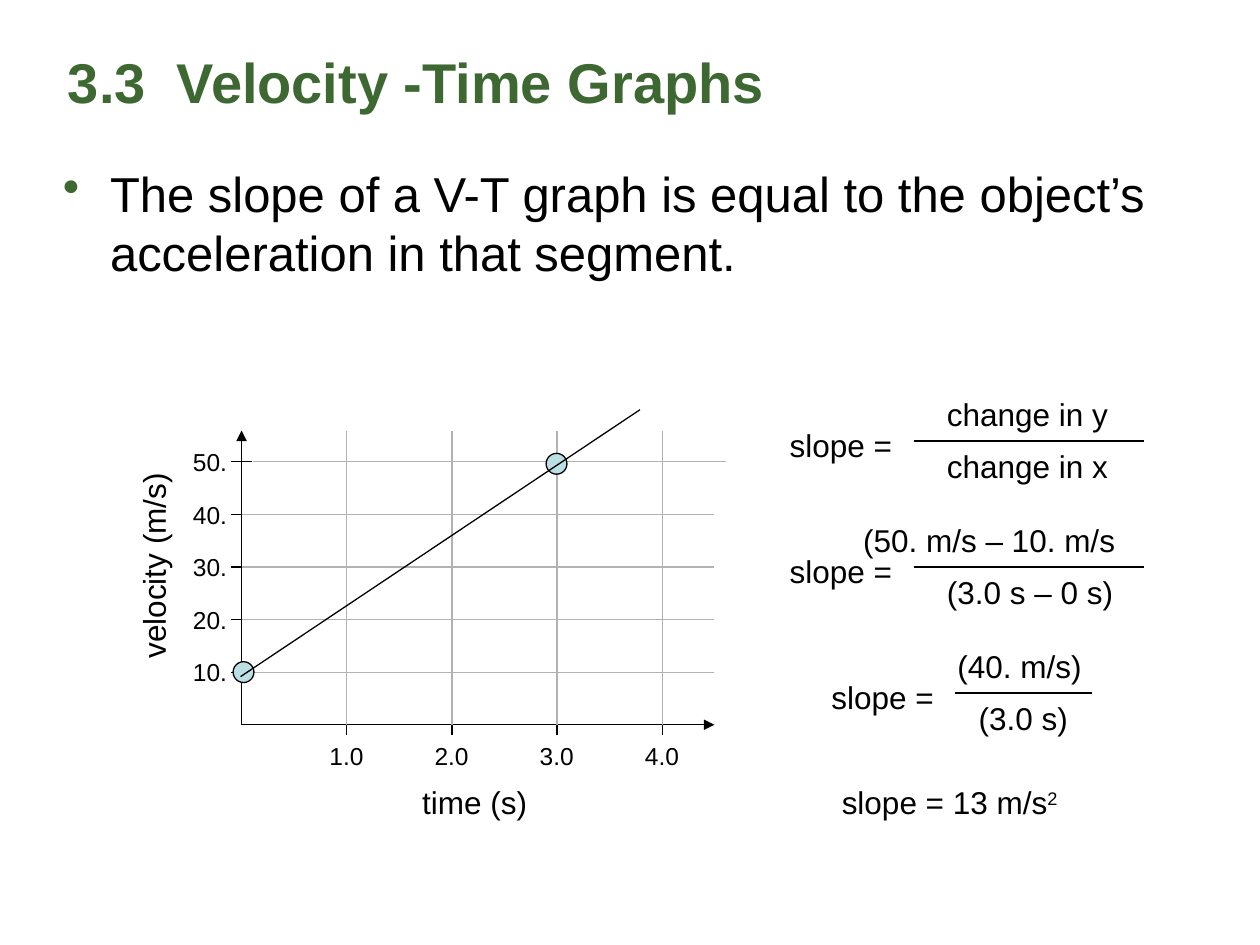
from dataclasses import dataclass

from lxml.etree import SubElement
from pptx import Presentation
from pptx.dml.color import RGBColor
from pptx.enum.shapes import MSO_CONNECTOR, MSO_SHAPE
from pptx.enum.text import MSO_ANCHOR, PP_ALIGN
from pptx.oxml.ns import qn
from pptx.util import Cm, Pt


@dataclass(frozen=True)
class Theme:
    font: str = "Arial"
    green: str = "3D6832"
    black: str = "000000"
    grey: str = "B2B2B2"
    blue: str = "BBE0E3"
    title: int = 32
    body: int = 28
    label: int = 18
    tick: int = 14
    line: float = 0.75


THEME = Theme()

# Graph frame in cm: origin, axis ends and the gap between ticks
LEFT, BASE = 4.87, 14.61
RIGHT, TOP = 14.4, 8.68
STEP_X, STEP_Y = 2.12, 1.06
TICK = 0.21


def rgb(code):
    return RGBColor.from_string(code)


def add_text(slide, text, x, y, width, height=1.01, size=THEME.label,
             color=THEME.black, bold=False, align=PP_ALIGN.LEFT):
    box = slide.shapes.add_textbox(Cm(x), Cm(y), Cm(width), Cm(height))
    box.text_frame.word_wrap = True
    para = box.text_frame.paragraphs[0]
    para.text = text
    para.alignment = align
    para.font.name = THEME.font
    para.font.size = Pt(size)
    para.font.bold = bold
    para.font.color.rgb = rgb(color)
    return box


def add_line(slide, x1, y1, x2, y2, color=THEME.black, arrow=False):
    line = slide.shapes.add_connector(
        MSO_CONNECTOR.STRAIGHT, Cm(x1), Cm(y1), Cm(x2), Cm(y2))
    line.line.color.rgb = rgb(color)
    line.line.width = Pt(THEME.line)
    props = line._element.spPr
    if arrow:
        SubElement(props.find(qn("a:ln")), qn("a:tailEnd"), type="triangle")
    SubElement(props, qn("a:effectLst"))


def add_dot(slide, x, y, size=0.42):
    dot = slide.shapes.add_shape(
        MSO_SHAPE.OVAL, Cm(x), Cm(y), Cm(size), Cm(size))
    dot.shadow.inherit = False
    dot.fill.solid()
    dot.fill.fore_color.rgb = rgb(THEME.blue)
    dot.line.color.rgb = rgb(THEME.black)
    dot.line.width = Pt(THEME.line)


def add_title(slide, text):
    box = add_text(slide, text, 0.1, 0.84, 25.4, 1.6, THEME.title,
                   THEME.green, bold=True)
    box.text_frame.margin_left = Cm(1.27)
    box.text_frame.vertical_anchor = MSO_ANCHOR.BOTTOM


def add_bullet(slide, text):
    box = add_text(slide, text, 1.02, 3.18, 22.86, 14.2, THEME.body)
    props = box.text_frame.paragraphs[0]._p.get_or_add_pPr()
    props.set("marL", str(Cm(0.95)))
    props.set("indent", str(Cm(-0.95)))
    # Bullet tags must come before the font defaults
    color = props.makeelement(qn("a:buClr"), {})
    SubElement(color, qn("a:srgbClr"), val=THEME.green)
    props.insert(0, color)
    props.insert(1, props.makeelement(qn("a:buChar"), {"char": "•"}))


def add_graph(slide):
    cols = [(LEFT + i * STEP_X, f"{i}.0") for i in range(1, 5)]
    rows = [(BASE - i * STEP_Y, f"{i}0.") for i in range(1, 6)]

    add_line(slide, LEFT, BASE, LEFT, TOP, arrow=True)
    add_line(slide, LEFT, BASE, RIGHT, BASE, arrow=True)
    for x, text in cols:
        add_line(slide, x, BASE - TICK, x, BASE + TICK)
        add_text(slide, text, x - 0.64, BASE + 0.21, 1.27, 0.84,
                 THEME.tick, align=PP_ALIGN.CENTER)
    for y, text in rows:
        add_line(slide, LEFT - TICK, y, LEFT + TICK, y)
        add_text(slide, text, LEFT - 1.27, y - 0.42, 1.27, 0.84,
                 THEME.tick, align=PP_ALIGN.CENTER)
    add_text(slide, "time (s)", 8.26, 15.66, 2.75)
    add_text(slide, "velocity (m/s)", 0.76, 10.69, 4.66).rotation = 270

    for x, _ in cols:
        add_line(slide, x, BASE, x, TOP, THEME.grey)
    for y, _ in rows:
        shift = 0.23 if y == rows[-1][0] else 0
        add_line(slide, LEFT + shift, y, RIGHT + shift, y, THEME.grey)

    add_dot(slide, 4.7, 13.34)
    add_dot(slide, 11.01, 9.14)
    add_line(slide, 4.85, 13.64, 12.9, 8.26)


def add_slope(slide, y, start, end, upper, lower):
    """Draw "slope =" and a fraction; upper and lower are (text, x, width)."""
    add_text(slide, "slope =", start - 2.75, y - 0.42, 3.39)
    add_line(slide, start, y, end, y)
    for (text, x, width), top in ((upper, y - 1.06), (lower, y)):
        add_text(slide, text, x, top, width)


def add_result(slide):
    box = add_text(slide, "slope = 13 m/s", 16.72, 15.66, 5.5)
    power = box.text_frame.paragraphs[0].add_run()
    power.text = "2"
    power.font._element.set("baseline", "30000")


def main():
    deck = Presentation()
    deck.slide_width, deck.slide_height = Cm(25.4), Cm(19.05)
    slide = deck.slides.add_slide(deck.slide_layouts[6])

    add_title(slide, "3.3  Velocity -Time Graphs")
    add_bullet(slide, "The slope of a V-T graph is equal to the object’s "
                      "acceleration in that segment.")
    add_graph(slide)
    add_slope(slide, 8.89, 18.42, 23.07,
              ("change in y", 18.84, 4.02), ("change in x", 18.84, 4.02))
    add_slope(slide, 11.43, 18.42, 23.07,
              ("(50. m/s – 10. m/s", 17.15, 6.14),
              ("(3.0 s – 0 s)", 18.84, 4.02))
    add_slope(slide, 13.97, 19.26, 22.01,
              ("(40. m/s)", 19.05, 3.39), ("(3.0 s)", 19.48, 2.33))
    add_result(slide)
    deck.save("out.pptx")


if __name__ == "__main__":
    main()
